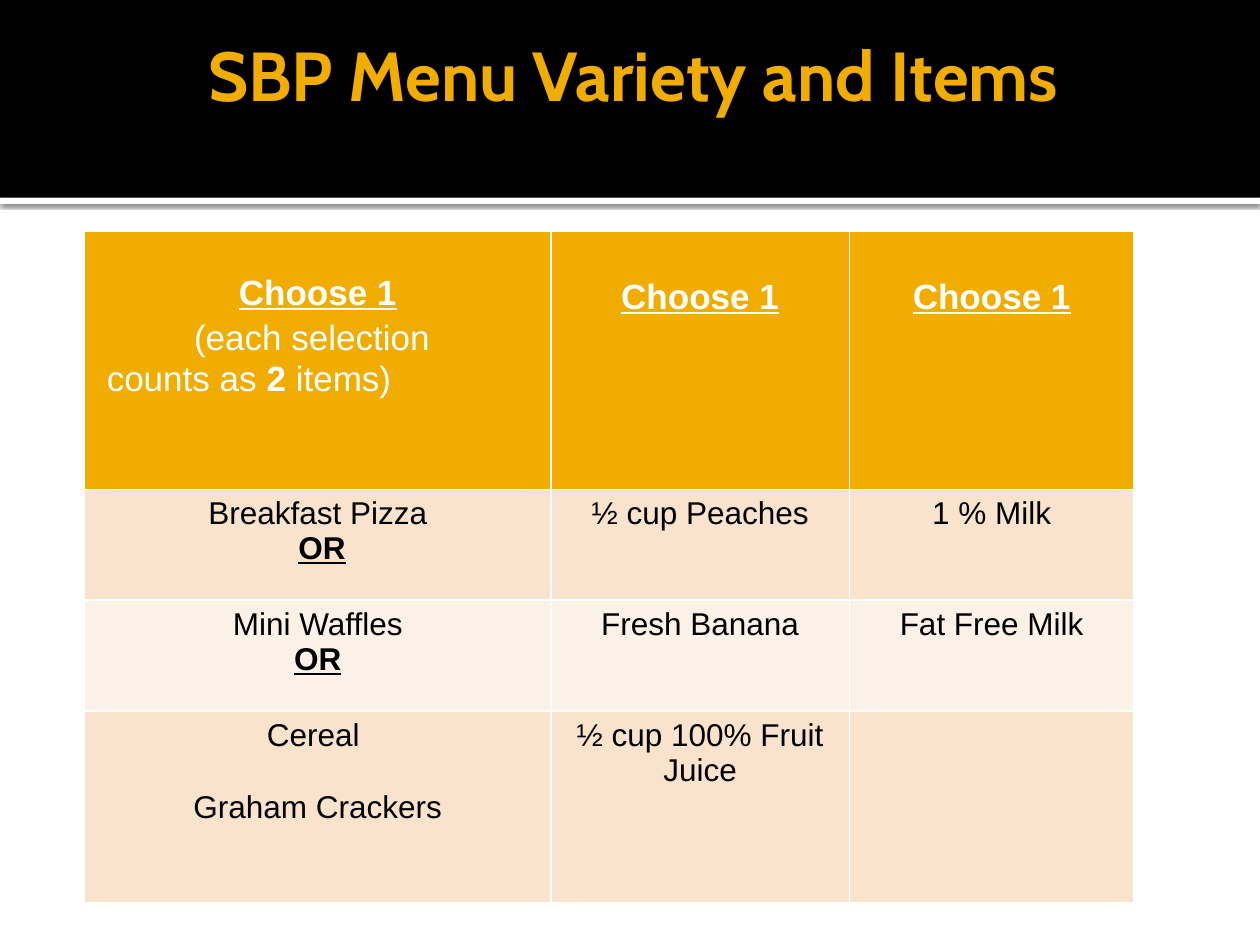
from lxml import etree
from pptx import Presentation
from pptx.dml.color import RGBColor
from pptx.enum import shapes, text
from pptx.oxml import ns
from pptx.util import Pt

GOLD = RGBColor(0xF0, 0xAD, 0x00)
PEACH = RGBColor(0xF9, 0xE3, 0xCC)
CREAM = RGBColor(0xFC, 0xF1, 0xE7)
BLACK = RGBColor(0, 0, 0)
WHITE = RGBColor(255, 255, 255)

CENTER, LEFT = text.PP_ALIGN.CENTER, text.PP_ALIGN.LEFT
BOLD = {"bold": True}
KEY = {"bold": True, "underline": True}

COLUMN_WIDTHS = (266.4, 170.6, 162.7)
ROW_HEIGHTS = (147.6, 63.4, 63.4, 109.4)
ROW_FILLS = (GOLD, PEACH, CREAM, PEACH)
HEADER_TOPS = (24.3, 26.5, 26.5)


def line(*runs, **paragraph_format):
    """Describe a paragraph; a run is a string or a (string, font format) pair."""
    pairs = [(run, {}) if isinstance(run, str) else run for run in runs]
    return pairs, paragraph_format


CHOOSE = line(("Choose 1", KEY))
OR = line(("OR", KEY))
ROWS = (
    (
        (
            CHOOSE,
            line("(each selection", (" ", {"size": Pt(24)})),
            line("counts as ", ("2", BOLD), " items)", alignment=LEFT, indent=Pt(5.4)),
        ),
        (CHOOSE,),
        (CHOOSE,),
    ),
    (
        (line("Breakfast Pizza"), line((" ", BOLD), ("OR", KEY))),
        (line("½ cup Peaches"),),
        (line("1 % Milk"),),
    ),
    (
        (line("Mini Waffles"), OR),
        (line("Fresh Banana"),),
        (line("Fat Free Milk"),),
    ),
    (
        (line("Cereal "), line("Graham Crackers", space_before=Pt(21.5))),
        (line("½ cup 100% Fruit Juice"),),
        (),
    ),
)


def apply(target, values):
    for name, value in values.items():
        setattr(target, name, value)


def add_band(slide, top, height, color):
    band = slide.shapes.add_shape(
        shapes.MSO_SHAPE.RECTANGLE, 0, Pt(top), Pt(720), Pt(height))
    band.shadow.inherit = False
    band.fill.solid()
    band.fill.fore_color.rgb = color
    band.line.fill.background()
    return band


def add_shadow(shape):
    effects = shape._element.spPr.find(ns.qn("a:effectLst"))
    shadow = etree.SubElement(
        effects, ns.qn("a:outerShdw"), blurRad=str(Pt(2.5)), dist=str(Pt(0.8)),
        dir="5400000", algn="tl", rotWithShape="0")
    color = etree.SubElement(shadow, ns.qn("a:srgbClr"), val=str(BLACK))
    etree.SubElement(color, ns.qn("a:alpha"), val="60000")


def format_title(slide):
    title = slide.shapes.title
    apply(title, {"left": Pt(36), "top": Pt(30.2), "width": Pt(648), "height": Pt(72)})
    frame = title.text_frame
    frame.text = "SBP Menu Variety and Items"
    # The deep bottom margin lifts the text towards the top of the band.
    apply(frame, {
        "word_wrap": True, "auto_size": text.MSO_AUTO_SIZE.NONE,
        "vertical_anchor": text.MSO_ANCHOR.MIDDLE, "margin_left": Pt(7.2),
        "margin_right": Pt(3.6), "margin_top": Pt(3.6), "margin_bottom": Pt(51.6)})
    paragraph = frame.paragraphs[0]
    paragraph.alignment = CENTER
    font = paragraph.runs[0].font
    apply(font, {"name": "Cabin", "size": Pt(39.6), "bold": True})
    font.color.rgb = GOLD
    slide.shapes._spTree.append(title._element)


def write_paragraph(paragraph, runs, paragraph_format, size, color):
    values = {"alignment": CENTER, **paragraph_format}
    indent = values.pop("indent", None)
    apply(paragraph, values)
    if indent is not None:
        paragraph._p.get_or_add_pPr().set("marL", str(indent))
    for words, font_format in runs:
        run = paragraph.add_run()
        run.text = words
        apply(run.font, {"name": "Arial", "size": size, "bold": False, **font_format})
        run.font.color.rgb = color


def fill_cell(cell, lines, fill, size, color):
    cell.fill.solid()
    cell.fill.fore_color.rgb = fill
    frame = cell.text_frame
    for index, (runs, paragraph_format) in enumerate(lines):
        paragraph = frame.add_paragraph() if index else frame.paragraphs[0]
        write_paragraph(paragraph, runs, paragraph_format, size, color)


def add_menu_table(slide):
    table = slide.shapes.add_table(
        len(ROWS), len(COLUMN_WIDTHS), Pt(48.4), Pt(132),
        Pt(sum(COLUMN_WIDTHS)), Pt(sum(ROW_HEIGHTS))).table
    for column, width in zip(table.columns, COLUMN_WIDTHS):
        column.width = Pt(width)
    for index, (row, height) in enumerate(zip(table.rows, ROW_HEIGHTS)):
        row.height = Pt(height)
        size, color = (Pt(18), BLACK) if index else (Pt(20), WHITE)
        for cell, lines in zip(row.cells, ROWS[index]):
            fill_cell(cell, lines, ROW_FILLS[index], size, color)
    for cell, top in zip(table.rows[0].cells, HEADER_TOPS):
        cell.margin_top = Pt(top)


def main():
    presentation = Presentation()
    apply(presentation, {"slide_width": Pt(720), "slide_height": Pt(540)})
    slide = presentation.slides.add_slide(presentation.slide_layouts[5])
    add_shadow(add_band(slide, 113, 3.6, WHITE))
    add_band(slide, 0, 113, BLACK)
    format_title(slide)
    add_menu_table(slide)
    presentation.save("out.pptx")


if __name__ == "__main__":
    main()
